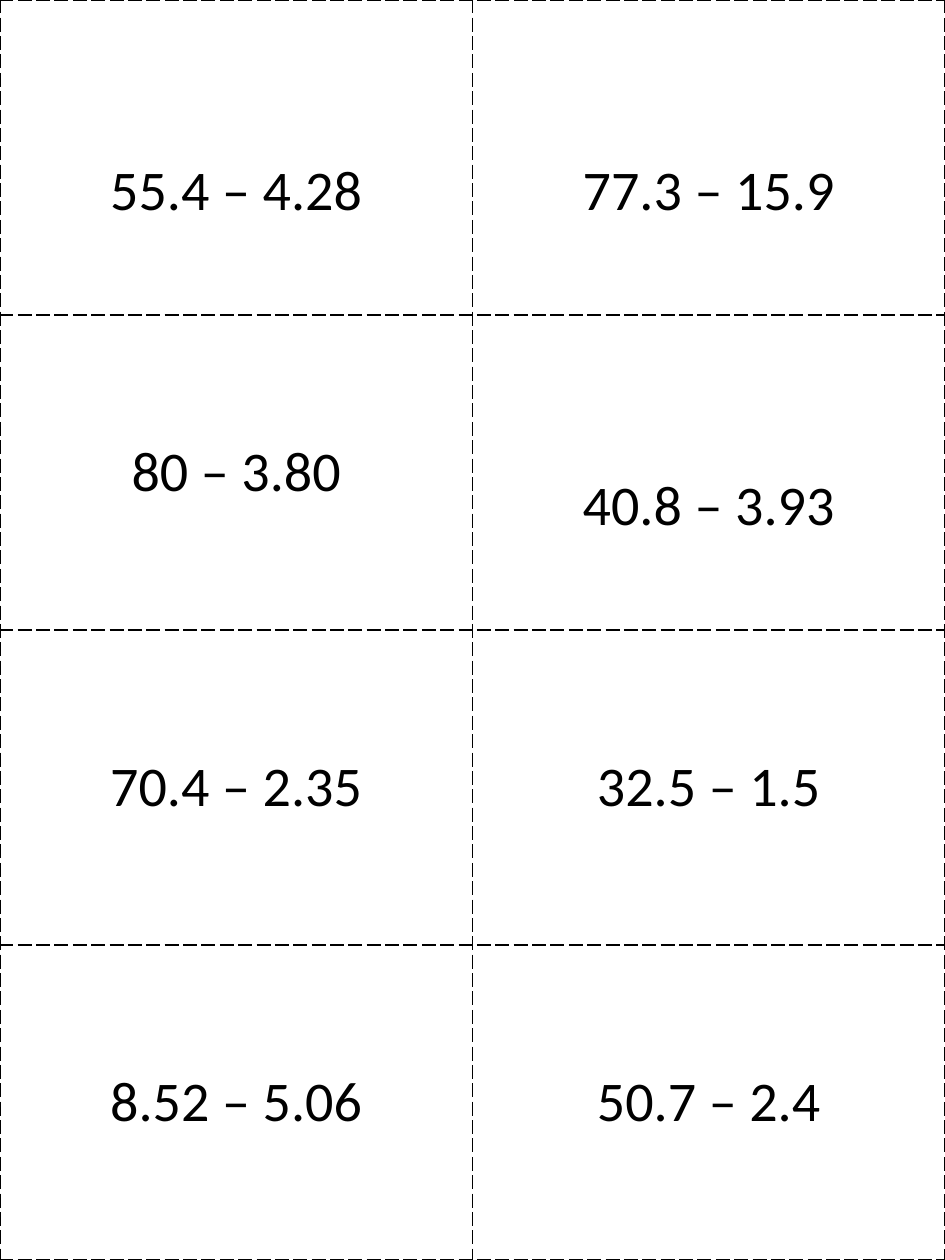
import dataclasses

import lxml.etree
import pptx
import pptx.dml.color
import pptx.enum.text
import pptx.oxml.ns
import pptx.util

Cm = pptx.util.Cm
WIDTH, HEIGHT = 19.05, 25.4
CARDS = [
    ["55.4 – 4.28", "77.3 – 15.9"],
    ["80 – 3.80", "40.8 – 3.93"],
    ["70.4 – 2.35", "32.5 – 1.5"],
    ["8.52 – 5.06", "50.7 – 2.4"],
]
LOWERED = {"55.4 – 4.28", "77.3 – 15.9", "40.8 – 3.93"}


@dataclasses.dataclass(frozen=True)
class Theme:
    font: str = "Calibri"
    size: int = 32
    ink: str = "000000"
    border: int = 1
    dash: str = "lgDash"
    line_height: float = 1.38


class CardSheet:
    def __init__(self, slide, theme):
        self.s = slide
        self.theme = theme

    def table(self, rows, width, height):
        n_rows, n_cols = len(rows), len(rows[0])
        sp = self.s.shapes.add_table(n_rows, n_cols, 0, 0, Cm(width), Cm(height))
        tbl = sp.table
        for name, value in {"first_row": False, "horz_banding": False}.items():
            setattr(tbl, name, value)
        for col in tbl.columns:
            col.width = Cm(width / n_cols)
        for row in tbl.rows:
            row.height = Cm(height / n_rows)
        for i, row in enumerate(rows):
            for j, text in enumerate(row):
                self.card(tbl.cell(i, j), text)

    def card(self, cell, text):
        drop = self.theme.line_height if text in LOWERED else 0
        layout = {
            "vertical_anchor": pptx.enum.text.MSO_ANCHOR.MIDDLE,
            "margin_left": Cm(0.25),
            "margin_right": Cm(0.25),
            "margin_top": Cm(0.13 + drop),
            "margin_bottom": Cm(0.13),
        }
        for name, value in layout.items():
            setattr(cell, name, value)
        self.borders(cell)
        cell.fill.background()
        p = cell.text_frame.paragraphs[0]
        p.alignment = pptx.enum.text.PP_ALIGN.CENTER
        r = p.add_run()
        r.text = text
        style = {"name": self.theme.font, "size": pptx.util.Pt(self.theme.size), "bold": False}
        for name, value in style.items():
            setattr(r.font, name, value)
        r.font.color.rgb = pptx.dml.color.RGBColor.from_string(self.theme.ink)

    def borders(self, cell):
        qn = pptx.oxml.ns.qn
        tc_pr = cell._tc.get_or_add_tcPr()
        for side in ("a:lnL", "a:lnR", "a:lnT", "a:lnB"):
            ln = lxml.etree.SubElement(tc_pr, qn(side), w=str(pptx.util.Pt(self.theme.border)))
            fill = lxml.etree.SubElement(ln, qn("a:solidFill"))
            lxml.etree.SubElement(fill, qn("a:srgbClr"), val=self.theme.ink)
            lxml.etree.SubElement(ln, qn("a:prstDash"), val=self.theme.dash)


def main():
    prs = pptx.Presentation()
    prs.slide_width, prs.slide_height = Cm(WIDTH), Cm(HEIGHT)
    s = prs.slides.add_slide(prs.slide_layouts[6])
    CardSheet(s, Theme()).table(CARDS, WIDTH, HEIGHT)
    prs.save("out.pptx")


if __name__ == "__main__":
    main()
